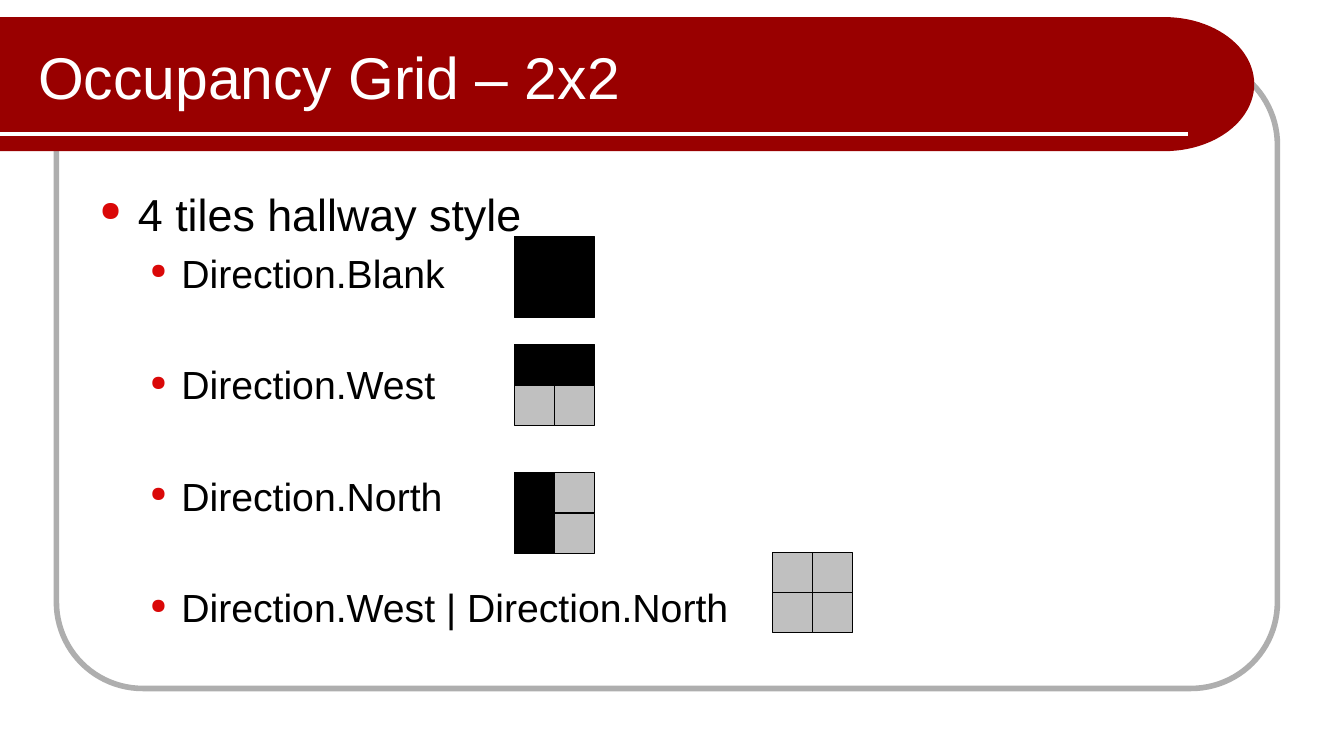
import math
from dataclasses import dataclass
from lxml import etree
from pptx import Presentation, util as u
from pptx.dml.color import RGBColor
from pptx.enum import shapes as sh, text as tx
from pptx.oxml.ns import qn


@dataclass(frozen=True)
class Theme:
    """Colours, type sizes and font of the slide."""
    red: str = "990000"
    dot: str = "DA0808"
    frame: str = "AEAEAE"
    wall: str = "000000"
    floor: str = "C0C0C0"
    ink: str = "000000"
    paper: str = "FFFFFF"
    font: str = "Arial"
    title: int = 42
    head: int = 32
    item: int = 28


T = Theme()
W, H = 13.33, 7.5
TILE = 0.4
MAPS = [
    (5.1, 2.35, ("##", "##")),
    (5.1, 3.42, ("##", "..")),
    (5.1, 4.69, ("#.", "#.")),
    (7.66, 5.48, ("..", "..")),
]
ITEMS = ["Direction.Blank", "Direction.West", "Direction.North",
         "Direction.West | Direction.North"]


def rgb(code):
    """Turn a hex code into a colour."""
    return RGBColor.from_string(code)


def paint(shape, fill=None, line=None, width=0.75):
    """Set fill and outline, and drop the shadow."""
    shape.shadow.inherit = False
    if fill:
        shape.fill.solid()
        shape.fill.fore_color.rgb = rgb(fill)
    else:
        shape.fill.background()
    if line:
        shape.line.color.rgb = rgb(line)
        shape.line.width = u.Pt(width)
    else:
        shape.line.fill.background()


def frame(slide, box, anchor):
    """Add an empty wrapping text box and return its frame."""
    body = slide.shapes.add_textbox(*map(u.Inches, box)).text_frame
    body.word_wrap = True
    body.vertical_anchor = anchor
    return body


def write(para, words, size, color, before=0, left=0, hang=0, dot=0):
    """Write one paragraph with its format and optional bullet."""
    if dot:
        props = para._p.get_or_add_pPr()
        props.set("marL", str(u.Inches(left)))
        props.set("indent", str(-u.Inches(hang)))
        tint = etree.SubElement(props, qn("a:buClr"))
        etree.SubElement(tint, qn("a:srgbClr"), val=T.dot)
        etree.SubElement(props, qn("a:buSzPct"), val=str(dot * 1000))
        etree.SubElement(props, qn("a:buChar"), char="●")
    para.space_before = u.Pt(before)
    run = para.add_run()
    run.text = words
    run.font.name = T.font
    run.font.size = u.Pt(size)
    run.font.color.rgb = rgb(color)


def panel(slide, box):
    """Draw the rounded grey frame."""
    rim = slide.shapes.add_shape(sh.MSO_SHAPE.ROUNDED_RECTANGLE,
                                 *map(u.Inches, box))
    rim.adjustments[0] = 0.137
    paint(rim, line=T.frame, width=4)


def banner(slide, box, title):
    """Draw the red band with its round end, rule and title."""
    x, y, w, h = box
    bend, mid = 0.89, y + h / 2
    turns = [math.pi * (n / 48 - 0.5) for n in range(49)]
    arc = [(x + w - bend + bend * math.cos(a), mid + h / 2 * math.sin(a))
           for a in turns]
    edge = [(u.Inches(a), u.Inches(b)) for a, b in arc + [(x, y + h)]]
    band = slide.shapes.build_freeform(u.Inches(x), u.Inches(y))
    band.add_line_segments(edge, close=True)
    paint(band.convert_to_shape(), T.red)
    low = u.Inches(y + h * 0.87)
    rule = slide.shapes.add_connector(sh.MSO_CONNECTOR.STRAIGHT, u.Inches(x),
                                      low, u.Inches(x + 11.78), low)
    rule.line.color.rgb = rgb(T.paper)
    rule.line.width = u.Pt(3)
    etree.SubElement(rule._element.spPr, qn("a:effectLst"))
    body = frame(slide, (x + 0.28, y + 0.08, 10.38, 1), tx.MSO_ANCHOR.MIDDLE)
    write(body.paragraphs[0], title, T.title, T.paper)


def outline(slide, box, head, items):
    """Write the heading and its spaced-out bullets."""
    body = frame(slide, box, tx.MSO_ANCHOR.TOP)
    write(body.paragraphs[0], head, T.head, T.ink,
          left=0.38, hang=0.38, dot=62)
    for n, words in enumerate(items):
        write(body.add_paragraph(), words, T.item, T.ink,
              before=46 if n else 6.5, left=0.81, hang=0.31, dot=54)


def tiles(slide, x, y, rows):
    """Draw a grid of wall and floor tiles from its rows."""
    for r, row in enumerate(rows):
        for c, mark in enumerate(row):
            cell = slide.shapes.add_shape(
                sh.MSO_SHAPE.RECTANGLE, u.Inches(x + c * TILE),
                u.Inches(y + r * TILE), u.Inches(TILE), u.Inches(TILE))
            paint(cell, T.wall if mark == "#" else T.floor, T.ink)


def main():
    """Build and save the slide."""
    deck = Presentation()
    deck.slide_width, deck.slide_height = u.Inches(W), u.Inches(H)
    slide = deck.slides.add_slide(deck.slide_layouts[6])
    panel(slide, (0.56, 0.58, 12.11, 6.25))
    banner(slide, (0, 0.17, 12.44, 1.33), "Occupancy Grid – 2x2")
    outline(slide, (0.89, 1.8, 11.56, 4.78), "4 tiles hallway style", ITEMS)
    for x, y, rows in MAPS:
        tiles(slide, x, y, rows)
    deck.save("out.pptx")


if __name__ == "__main__":
    main()
